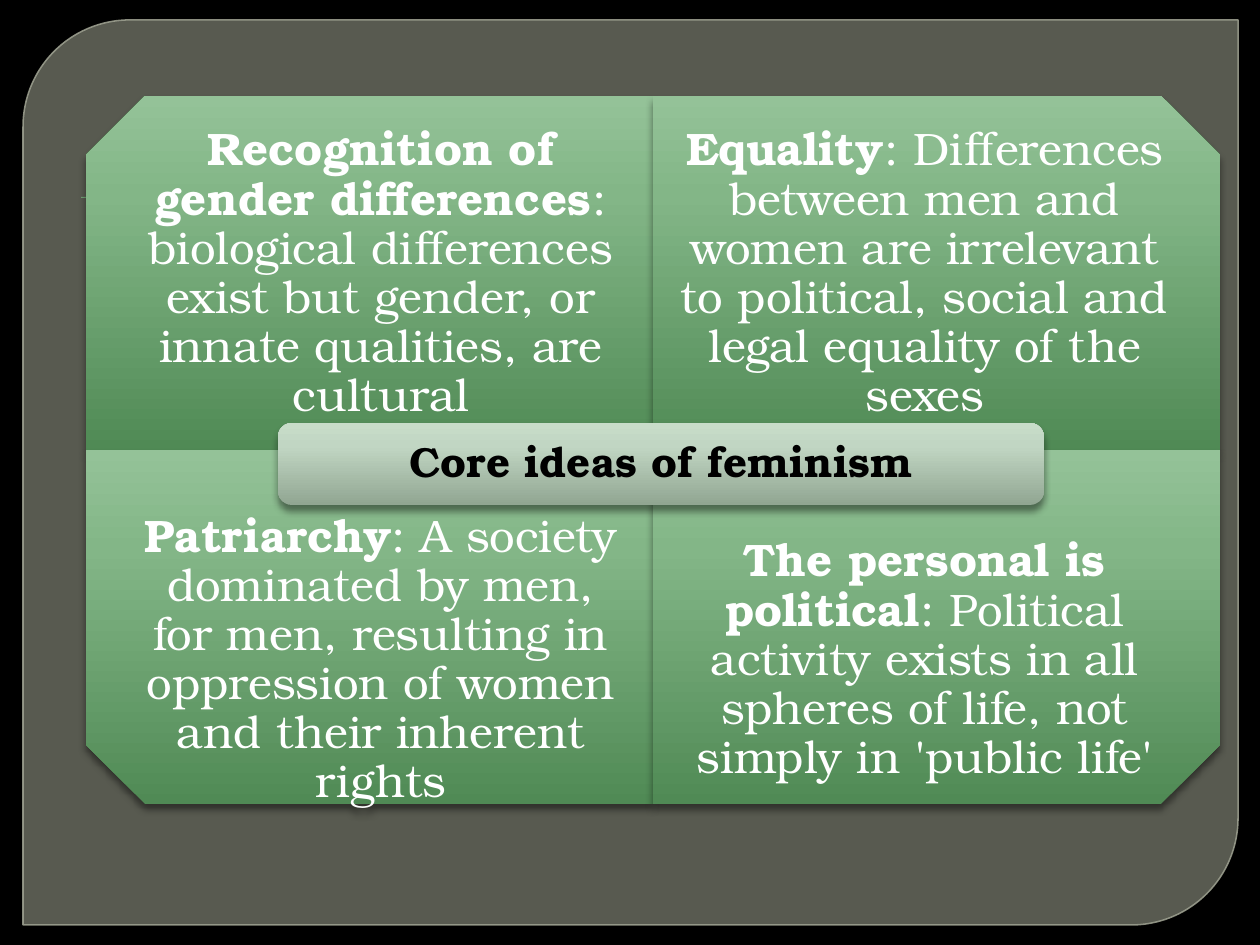
from dataclasses import dataclass

from lxml.etree import SubElement
from pptx import Presentation
from pptx.dml.color import RGBColor
from pptx.enum.shapes import MSO_SHAPE
from pptx.enum.text import MSO_ANCHOR, PP_ALIGN
from pptx.oxml.ns import qn
from pptx.util import Emu, Pt

EMU_PER_PIXEL = 914400 / 126


def px(length):
    return Emu(round(length * EMU_PER_PIXEL))


@dataclass(frozen=True)
class Theme:
    font: str = "TeX Gyre Bonum"
    background: str = "000000"
    frame: str = "888B7B"
    frame_line: str = "9DA090"
    rule: str = "72A376"
    shadow: str = "000000"
    panel_text: str = "FFFFFF"
    title_text: str = "000000"
    panel_stops: tuple = ((0, "508A55"), (72, "83B687"), (100, "94C298"))
    title_stops: tuple = ((0, "91A692"), (72, "C1D6C3"), (100, "C8DDC9"))
    panel_size: int = 26
    title_size: int = 24


class SlideBuilder:
    def __init__(self, slide, theme):
        self.slide = slide
        self.theme = theme
        slide.background.fill.solid()
        slide.background.fill.fore_color.rgb = RGBColor.from_string(theme.background)

    def add_preset(self, kind, left, top, width, height):
        shape = self.slide.shapes.add_shape(
            kind, px(left), px(top), px(width), px(height))
        shape.shadow.inherit = False
        shape.line.fill.background()
        return shape

    def set_solid(self, fill, color, alpha=100):
        fill.solid()
        fill.fore_color.rgb = RGBColor.from_string(color)
        if alpha < 100:
            color_element = next(fill._xPr.iter(qn("a:srgbClr")))
            SubElement(color_element, qn("a:alpha"), val=str(alpha * 1000))

    def set_gradient(self, shape, stops):
        shape.fill.gradient()
        shape.fill.gradient_angle = 90
        stop_list = next(shape._element.spPr.iter(qn("a:gsLst")))
        for stop in list(stop_list):
            stop_list.remove(stop)
        for position, color in stops:
            stop = SubElement(stop_list, qn("a:gs"), pos=str(position * 1000))
            SubElement(stop, qn("a:srgbClr"), val=color)

    def set_shadow(self, shape, alpha, blur, distance):
        shape.shadow.inherit = False
        effects = shape._element.spPr.find(qn("a:effectLst"))
        shadow = SubElement(
            effects, qn("a:outerShdw"), blurRad=str(Pt(blur)),
            dist=str(Pt(distance)), dir="5400000", rotWithShape="0")
        color = SubElement(shadow, qn("a:srgbClr"), val=self.theme.shadow)
        SubElement(color, qn("a:alpha"), val=str(alpha * 1000))

    def set_text(self, shape, runs, size, color, insets):
        frame = shape.text_frame
        frame.word_wrap = True
        frame.vertical_anchor = MSO_ANCHOR.MIDDLE
        (frame.margin_left, frame.margin_top,
         frame.margin_right, frame.margin_bottom) = map(px, insets)
        paragraph = frame.paragraphs[0]
        paragraph.alignment = PP_ALIGN.CENTER
        paragraph.line_spacing = 0.9
        paragraph.font.name = self.theme.font
        paragraph.font.size = Pt(size)
        paragraph.font.color.rgb = RGBColor.from_string(color)
        for text, bold in runs:
            run = paragraph.add_run()
            run.text = text
            run.font.bold = bold

    def add_frame(self, left, top, width, height):
        shape = self.add_preset(
            MSO_SHAPE.ROUND_2_DIAG_RECTANGLE, left, top, width, height)
        shape.adjustments[0] = 0.118
        shape.adjustments[1] = 0
        self.set_solid(shape.fill, self.theme.frame, 65)
        self.set_solid(shape.line.fill, self.theme.frame_line, 88)
        shape.line.width = Pt(0.87)

    def add_rule(self, left, top, width, height):
        shape = self.add_preset(MSO_SHAPE.RECTANGLE, left, top, width, height)
        self.set_solid(shape.fill, self.theme.rule)
        self.set_shadow(shape, 75, 1, 1)

    def add_panel(self, center, side, heading, body, insets):
        width, height, cut = 567, 354, 59
        (center_x, center_y), (side_x, side_y) = center, side
        outer_x = center_x + side_x * width
        outer_y = center_y + side_y * height
        builder = self.slide.shapes.build_freeform(
            center_x, center_y, scale=EMU_PER_PIXEL)
        builder.add_line_segments([
            (outer_x, center_y),
            (outer_x, outer_y - side_y * cut),
            (outer_x - side_x * cut, outer_y),
            (center_x, outer_y),
        ], close=True)
        shape = builder.convert_to_shape()
        shape.line.fill.background()
        self.set_gradient(shape, self.theme.panel_stops)
        self.set_shadow(shape, 43, 4, 3)
        self.set_text(shape, [(heading, True), (f": {body}", False)],
                      self.theme.panel_size, self.theme.panel_text, insets)

    def add_title(self, text, left, top, width, height):
        shape = self.add_preset(
            MSO_SHAPE.ROUNDED_RECTANGLE, left, top, width, height)
        shape.adjustments[0] = 0.17
        self.set_gradient(shape, self.theme.title_stops)
        self.set_shadow(shape, 43, 4, 3)
        self.set_text(shape, [(text, True)], self.theme.title_size,
                      self.theme.title_text, (12, 12, 12, 12))


PANELS = [
    ((-1, -1), "Recognition of gender differences",
     "biological differences exist but gender, or innate qualities, are cultural"),
    ((1, -1), "Equality",
     "Differences between men and women are irrelevant to political, "
     "social and legal equality of the sexes"),
    ((-1, 1), "Patriarchy",
     "A society dominated by men, for men, resulting in oppression of women "
     "and their inherent rights"),
    ((1, 1), "The personal is political",
     "Political activity exists in all spheres of life, not simply in 'public life'"),
]
SIDE_INSETS = {-1: (48, 25), 1: (25, 48)}
VERTICAL_INSETS = {-1: (24, 22), 1: (115, 48)}


def main():
    presentation = Presentation()
    presentation.slide_width = px(1260)
    presentation.slide_height = px(945)
    slide = presentation.slides.add_slide(presentation.slide_layouts[6])
    builder = SlideBuilder(slide, Theme())
    builder.add_frame(23, 20, 1215, 905)
    builder.add_rule(81, 197, 1103, 1)
    for side, heading, body in PANELS:
        left, right = SIDE_INSETS[side[0]]
        top, bottom = VERTICAL_INSETS[side[1]]
        builder.add_panel((653, 450), side, heading, body,
                          (left, top, right, bottom))
    builder.add_title("Core ideas of feminism", 278, 423, 766, 82)
    presentation.save("out.pptx")


if __name__ == "__main__":
    main()
